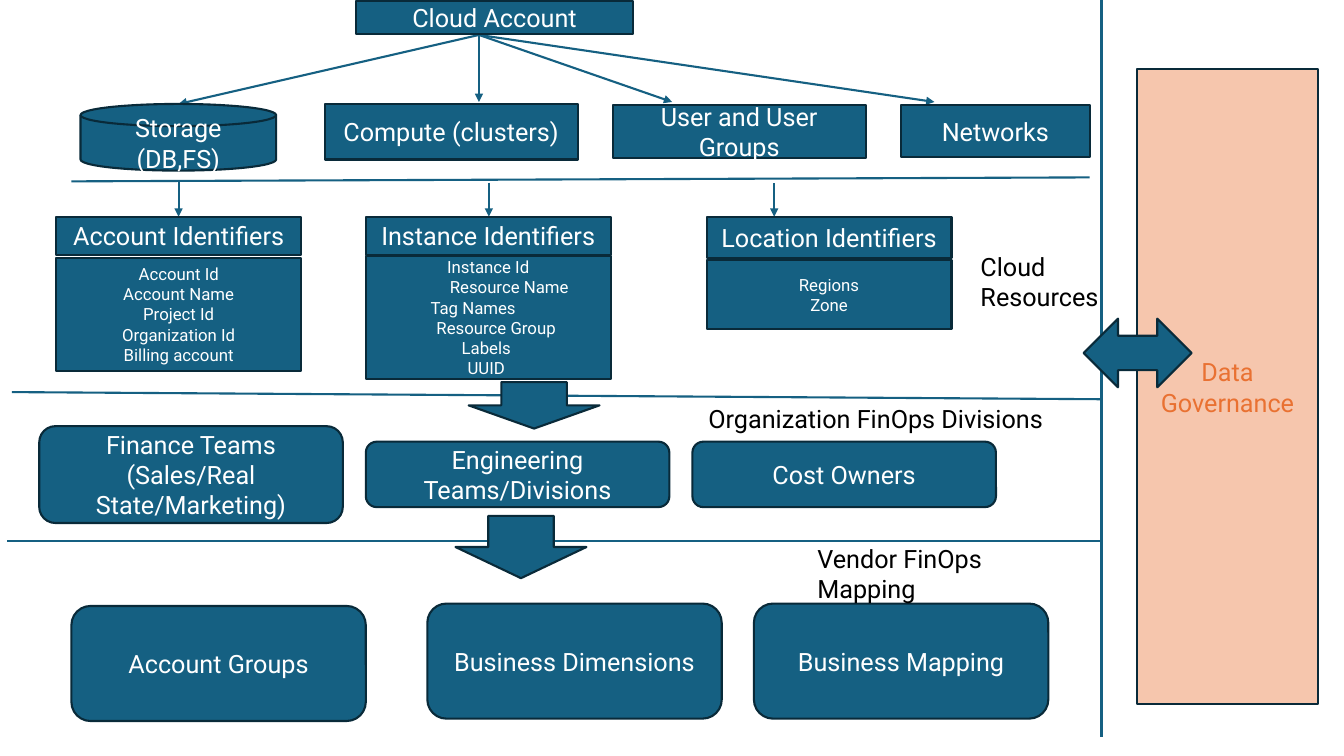
from dataclasses import dataclass

from lxml import etree
from pptx import Presentation
from pptx.dml.color import RGBColor
from pptx.enum.shapes import MSO_CONNECTOR, MSO_SHAPE
from pptx.enum.text import MSO_ANCHOR, MSO_AUTO_SIZE, PP_ALIGN
from pptx.oxml.ns import qn
from pptx.slide import Slide
from pptx.text.text import TextFrame
from pptx.util import Cm, Pt

RECT = MSO_SHAPE.RECTANGLE
ROUNDED = MSO_SHAPE.ROUNDED_RECTANGLE
DISK = MSO_SHAPE.FLOWCHART_MAGNETIC_DISK
DOWN_ARROW = MSO_SHAPE.DOWN_ARROW
TWO_WAY_ARROW = MSO_SHAPE.LEFT_RIGHT_ARROW
STRAIGHT = MSO_CONNECTOR.STRAIGHT
CENTER, LEFT = PP_ALIGN.CENTER, PP_ALIGN.LEFT
MIDDLE, TOP = MSO_ANCHOR.MIDDLE, MSO_ANCHOR.TOP
GROW = MSO_AUTO_SIZE.SHAPE_TO_FIT_TEXT

COLORS = {
    "blue": "156082",
    "outline": "092A39",
    "peach": "F6C6AD",
    "orange": "E97132",
    "white": "FFFFFF",
    "black": "000000",
}
LINE_WIDTH = Pt(1.5)
BOX_FRAME = {"word_wrap": True, "vertical_anchor": MIDDLE}
LABEL_FRAME = {"word_wrap": True, "vertical_anchor": TOP, "auto_size": GROW}


@dataclass(frozen=True)
class TextLine:
    """One paragraph; shift moves its centre sideways, in centimetres."""
    text: str
    shift: float = 0


@dataclass(frozen=True)
class Box:
    left: float
    top: float
    width: float
    height: float
    lines: tuple[TextLine, ...] = ()
    kind: MSO_SHAPE = RECT
    size: int = 18
    fill: str = "blue"
    color: str = "white"


@dataclass(frozen=True)
class Label:
    left: float
    top: float
    width: float
    height: float
    text: str


@dataclass(frozen=True)
class Line:
    x1: float
    y1: float
    x2: float
    y2: float
    arrow: bool = False


@dataclass(frozen=True)
class IdentifierCard:
    left: float
    title: str
    title_height: float
    body_top: float
    body_height: float
    items: tuple[TextLine, ...]


def text_lines(*texts: str) -> tuple[TextLine, ...]:
    return tuple(TextLine(text) for text in texts)


RESOURCES = (
    Box(8.97, 0.03, 6.99, 0.84, text_lines("Cloud Account")),
    Box(2.03, 2.62, 4.93, 1.68, text_lines("Storage (DB,FS)"), DISK),
    Box(8.18, 2.62, 6.38, 1.4, text_lines("Compute (clusters)")),
    Box(15.44, 2.64, 6.38, 1.35, text_lines("User and User Groups")),
    Box(22.71, 2.64, 4.75, 1.32, text_lines("Networks")),
)

CARD_TOP, CARD_WIDTH = 5.46, 6.17
CARDS = (
    IdentifierCard(1.42, "Account Identifiers", 0.97, 6.5, 2.84, text_lines(
        "Account Id", "Account Name", "Project Id", "Organization Id", "Billing account")),
    IdentifierCard(9.22, "Instance Identifiers", 0.97, 6.45, 3.1, (
        TextLine("Instance Id"),
        TextLine("Resource Name", 0.53),
        TextLine("Tag Names", -0.38),
        TextLine("Resource Group", 0.58),
        TextLine("Labels", -0.05),
        TextLine("UUID"),
    )),
    IdentifierCard(17.81, "Location Identifiers", 1.04, 6.55, 1.75,
                   text_lines("Regions", "Zone")),
)

TEAM_LEFT, TEAM_STEP, TEAM_WIDTH = 0.99, 8.23, 7.65
TEAMS = (
    ("Finance Teams (Sales/Real State/Marketing)", 10.74, 2.44),
    ("Engineering Teams/Divisions", 11.13, 1.65),
    ("Cost Owners", 11.13, 1.65),
)

MAPPING_WIDTH, MAPPING_HEIGHT = 7.42, 2.9
MAPPINGS = (
    ("Account Groups", 1.8, 15.27),
    ("Business Dimensions", 10.77, 15.21),
    ("Business Mapping", 19, 15.21),
)

BLOCK_ARROWS = (
    Box(11.81, 9.63, 3.3, 1.17, kind=DOWN_ARROW),
    Box(11.48, 13, 3.3, 1.57, kind=DOWN_ARROW),
    Box(27.31, 8.03, 2.72, 1.73, kind=TWO_WAY_ARROW),
)
GOVERNANCE = Box(28.65, 1.75, 4.57, 16, text_lines("Data Governance"),
                 fill="peach", color="orange")

LABELS = (
    Label(24.46, 6.2, 3.89, 1.8, "Cloud Resources"),
    Label(17.6, 10.03, 9.86, 1.02, "Organization FinOps Divisions"),
    Label(20.35, 13.56, 4.72, 1.8, "Vendor FinOps Mapping"),
)

DIVIDER_X = 27.76
DIVIDERS = (
    Line(1.8, 4.57, 27.46, 4.47),
    Line(0.3, 9.88, DIVIDER_X, 10.06),
    Line(0.18, 13.64, DIVIDER_X, 13.64),
    Line(DIVIDER_X, 0, DIVIDER_X, 18.57),
)
HUB_X, HUB_Y = 12.07, 0.88
RESOURCE_TIPS = ((4.5, 2.62), (HUB_X, 2.57), (16.94, 2.57), (23.55, 2.57))
CARD_ARROWS = ((4.5, 4.55), (12.32, 4.6), (19.51, 4.62))


def rgb(name: str) -> RGBColor:
    return RGBColor.from_string(COLORS[name])


def write_text(frame: TextFrame, lines: tuple[TextLine, ...], size: int, color: str,
               alignment: PP_ALIGN, frame_format: dict) -> None:
    for name, value in frame_format.items():
        setattr(frame, name, value)
    for index, line in enumerate(lines):
        para = frame.add_paragraph() if index else frame.paragraphs[0]
        para.alignment = alignment
        if line.shift:
            margin = "marL" if line.shift > 0 else "marR"
            para._p.get_or_add_pPr().set(margin, str(Cm(2 * abs(line.shift))))
        span = para.add_run()
        span.text = line.text
        for name, value in {"name": "Roboto", "size": Pt(size)}.items():
            setattr(span.font, name, value)
        span.font.color.rgb = rgb(color)


def draw_box(page: Slide, box: Box) -> None:
    shape = page.shapes.add_shape(
        box.kind, Cm(box.left), Cm(box.top), Cm(box.width), Cm(box.height))
    shape.shadow.inherit = False
    shape.fill.solid()
    shape.fill.fore_color.rgb = rgb(box.fill)
    shape.line.color.rgb = rgb("outline")
    shape.line.width = LINE_WIDTH
    write_text(shape.text_frame, box.lines, box.size, box.color, CENTER, BOX_FRAME)


def draw_label(page: Slide, label: Label) -> None:
    shape = page.shapes.add_textbox(
        Cm(label.left), Cm(label.top), Cm(label.width), Cm(label.height))
    write_text(shape.text_frame, text_lines(label.text), 18, "black", LEFT, LABEL_FRAME)


def draw_line(page: Slide, line: Line) -> None:
    connector = page.shapes.add_connector(
        STRAIGHT, Cm(line.x1), Cm(line.y1), Cm(line.x2), Cm(line.y2))
    connector.line.color.rgb = rgb("blue")
    connector.line.width = LINE_WIDTH
    properties = connector._element.spPr
    if line.arrow:
        etree.SubElement(properties.find(qn("a:ln")), qn("a:tailEnd"), type="triangle")
    etree.SubElement(properties, qn("a:effectLst"))


def draw_card(page: Slide, card: IdentifierCard) -> None:
    draw_box(page, Box(card.left, CARD_TOP, CARD_WIDTH, card.title_height,
                       text_lines(card.title)))
    draw_box(page, Box(card.left, card.body_top, CARD_WIDTH, card.body_height,
                       card.items, size=12))


def main() -> None:
    deck = Presentation()
    deck.slide_width, deck.slide_height = Cm(33.87), Cm(19.05)
    page = deck.slides.add_slide(deck.slide_layouts[6])

    hub_arrows = [Line(HUB_X, HUB_Y, x, y, True) for x, y in RESOURCE_TIPS]
    card_arrows = [Line(x, y, x, CARD_TOP, True) for x, y in CARD_ARROWS]
    for line in (*DIVIDERS, *hub_arrows, *card_arrows):
        draw_line(page, line)
    for card in CARDS:
        draw_card(page, card)

    teams = [Box(TEAM_LEFT + TEAM_STEP * column, top, TEAM_WIDTH, height,
                 text_lines(text), ROUNDED)
             for column, (text, top, height) in enumerate(TEAMS)]
    mappings = [Box(left, top, MAPPING_WIDTH, MAPPING_HEIGHT, text_lines(text), ROUNDED)
                for text, left, top in MAPPINGS]
    for box in (*RESOURCES, *teams, *mappings, GOVERNANCE, *BLOCK_ARROWS):
        draw_box(page, box)
    for label in LABELS:
        draw_label(page, label)
    deck.save("out.pptx")


if __name__ == "__main__":
    main()
